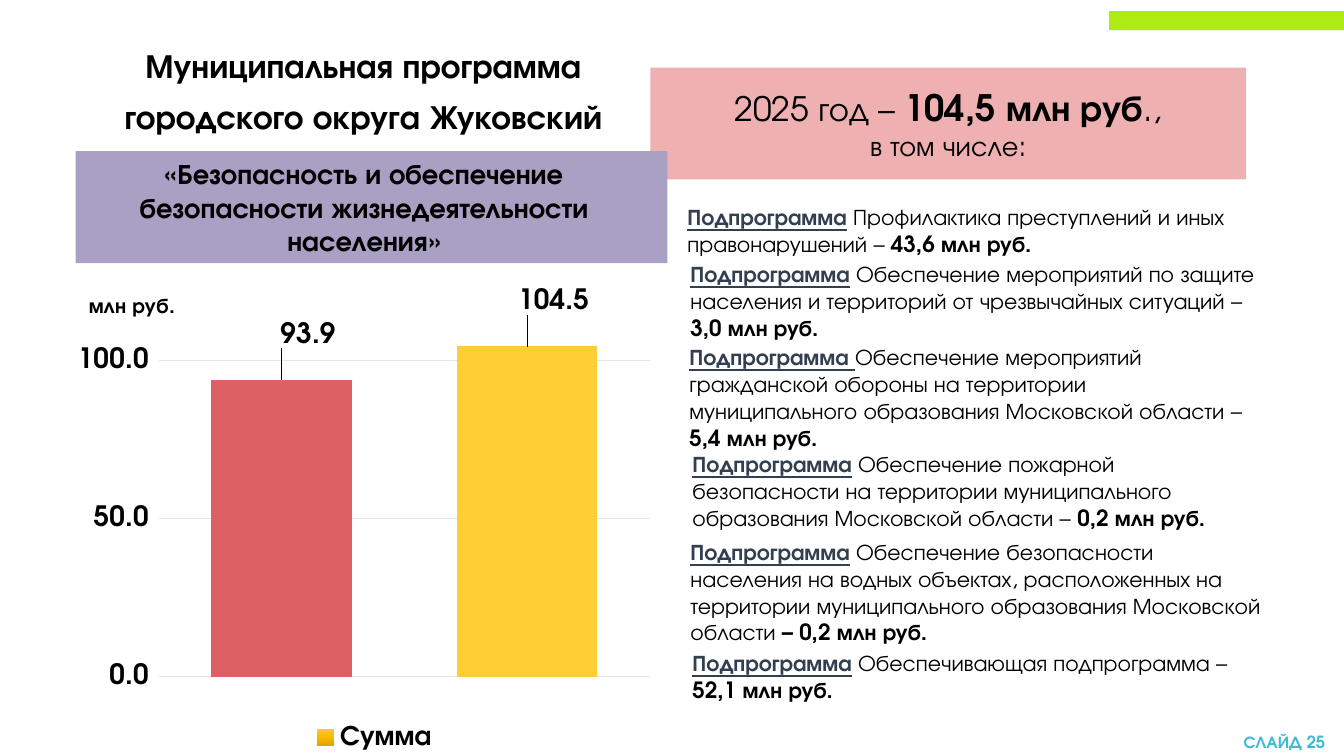
from copy import deepcopy
from lxml import etree
from pptx import Presentation
from pptx.chart.data import CategoryChartData as Data
from pptx.dml.color import RGBColor as RGB
from pptx.enum.chart import XL_CHART_TYPE as Kind, XL_LABEL_POSITION as Spot
from pptx.enum.chart import XL_LEGEND_POSITION as Side, XL_TICK_MARK as Tick
from pptx.enum.shapes import MSO_SHAPE as Form
from pptx.enum.text import MSO_ANCHOR as Anchor, PP_ALIGN as Align
from pptx.oxml.ns import qn
from pptx.util import Pt

PX = 9144
FACE = "TeX Gyre Adventor"
HUE = {
    "black": "000000", "lime": "ADEB12", "pink": "EEB0B1", "violet": "A9A0C4",
    "slate": "333F50", "teal": "40BAD2", "red": "DD6164", "yellow": "FFCE33",
    "grid": "E5E5E5", "light": "FFC24B", "gold": "FAB900", "dark": "DEA400",
}


def style(font, size, bold=True, hue="black", under=False):
    font.name = FACE
    font.size = Pt(size)
    font.bold = bold
    font.underline = under
    font.color.rgb = RGB.from_string(HUE[hue])


def place(node, slot, **vals):
    for old in node.findall(qn("c:layout")):
        node.remove(old)
    box = etree.Element(qn("c:layout"))
    man = etree.SubElement(box, qn("c:manualLayout"))
    for key, val in vals.items():
        etree.SubElement(man, qn("c:" + key)).set("val", str(val))
    node.insert(slot, box)


deck = Presentation()
deck.slide_width, deck.slide_height = 1333 * PX, 750 * PX
slide = deck.slides.add_slide(deck.slide_layouts[6])

bars = []
for hue, box in [
    ("lime", (1100, 11, 233, 19)),
    ("pink", (645, 67, 591, 111)),
    ("violet", (75, 150, 587, 111)),
]:
    bar = slide.shapes.add_shape(Form.RECTANGLE, *[n * PX for n in box])
    bar.shadow.inherit = False
    bar.fill.solid()
    bar.fill.fore_color.rgb = RGB.from_string(HUE[hue])
    bar.line.fill.background()
    bars.append(bar)

texts = [
    (bars[1], Align.CENTER, [
        [("2025 год – ", 24, False), ("104,5 млн руб", 26), (".,", 24, False)],
        [("в том числе:", 20, False)],
    ]),
    ((70, 155, 582, 101), Align.CENTER, [
        [("«Безопасность и обеспечение безопасности жизнедеятельности населения»", 20)],
    ]),
    ((75, 22, 571, 132), Align.CENTER, [
        [("Муниципальная программа", 24)],
        [("городского округа Жуковский", 24)],
    ]),
    ((1215, 722, 118, 28), Align.CENTER, [[("СЛАЙД 25", 12, True, "teal")]]),
]

for box, under, body, total in [
    ((672, 196, 591, 64), False,
     "Профилактика преступлений и иных правонарушений – ", "43,6 млн руб."),
    ((675, 253, 580, 91), False,
     "Обеспечение мероприятий по защите населения и территорий "
     "от чрезвычайных ситуаций – ", "3,0 млн руб."),
    ((674, 335, 580, 118), True,
     "Обеспечение мероприятий гражданской обороны на территории "
     "муниципального образования Московской области – ", "5,4 млн руб."),
    ((677, 441, 587, 91), False,
     "Обеспечение пожарной безопасности на территории "
     "муниципального образования Московской области – ", "0,2 млн руб."),
    ((675, 528, 587, 118), False,
     "Обеспечение безопасности населения на водных объектах, расположенных "
     "на территории муниципального образования Московской области ",
     "– 0,2 млн руб."),
    ((677, 639, 587, 64), False,
     "Обеспечивающая подпрограмма – ", "52,1 млн руб."),
]:
    texts.append((box, Align.LEFT, [[
        ("Подпрограмма", 16, True, "slate", True),
        (" ", 16, True, "slate", under),
        (body, 16, False),
        (total, 16),
    ]]))

for box, align, paras in texts:
    if isinstance(box, tuple):
        frame = slide.shapes.add_textbox(*[n * PX for n in box]).text_frame
    else:
        frame = box.text_frame
    frame.word_wrap = True
    frame.vertical_anchor = Anchor.MIDDLE
    for i, runs in enumerate(paras):
        para = frame.add_paragraph() if i else frame.paragraphs[0]
        para.alignment = align
        if paras[0][0][1:] == (24,):
            para.line_spacing = 1.1
            if i:
                para.space_before = Pt(5)
        for text, *look in runs:
            run = para.add_run()
            run.text = text
            style(run.font, *look)

data = Data(number_format="0.0")
data.categories = ["1", "2"]
data.add_series("Сумма", [93.9, 104.5])
box = [n * PX for n in (77, 260, 587, 490)]
chart = slide.shapes.add_chart(Kind.COLUMN_CLUSTERED, *box, data).chart
chart.has_title = False
style(chart.font, 10, False)
chart.has_legend = True
chart.legend.position = Side.BOTTOM
chart.legend.include_in_layout = False
style(chart.legend.font, 20)
chart.category_axis.visible = False

axis = chart.value_axis
axis.minimum_scale, axis.maximum_scale, axis.major_unit = 0, 120, 50
axis.major_tick_mark = Tick.OUTSIDE
axis.format.line.fill.background()
axis.tick_labels.number_format = "0.0"
axis.tick_labels.number_format_is_linked = False
style(axis.tick_labels.font, 20)
grid = axis.major_gridlines.format.line
grid.width = Pt(0.75)
grid.color.rgb = RGB.from_string(HUE["grid"])

frame = axis.axis_title.text_frame
run = frame.paragraphs[0].add_run()
run.text = "млн руб."
style(run.font, 15)
title = axis.axis_title._element
body = title.find(".//" + qn("a:bodyPr"))
body.set("rot", "0")
body.set("vert", "horz")
place(title, 1, xMode="edge", yMode="edge", x=0.01, y=0.06)

plot = chart.plots[0]
plot.gap_width = 75
plot.vary_by_categories = False
area = chart._chartSpace.find(".//" + qn("c:plotArea"))
place(area, 0, layoutTarget="inner", xMode="edge", yMode="edge",
      x=0.135, y=0.071, w=0.832, h=0.769)

row = plot.series[0]
fill = row.format.fill
fill.gradient()
fill.gradient_angle = 270
stops = row._element.find(".//" + qn("a:gsLst"))
stops.insert(1, deepcopy(stops[0]))
for stop, hue, pos in zip(fill.gradient_stops, ("light", "gold", "dark"), (0, 0.5, 1)):
    stop.color.rgb = RGB.from_string(HUE[hue])
    stop.position = pos

tags = row.data_labels
tags.show_value = True
tags.number_format = "0.0"
tags.number_format_is_linked = False
style(tags.font, 20)
for i, hue in enumerate(("red", "yellow")):
    point = row.points[i]
    point.format.fill.solid()
    point.format.fill.fore_color.rgb = RGB.from_string(HUE[hue])
    style(point.data_label.font, 20)
    point.data_label.position = Spot.OUTSIDE_END
for tag in row._element.iter(qn("c:dLbl")):
    place(tag, 1, x=0.045, y=-0.055)

deck.save("out.pptx")
